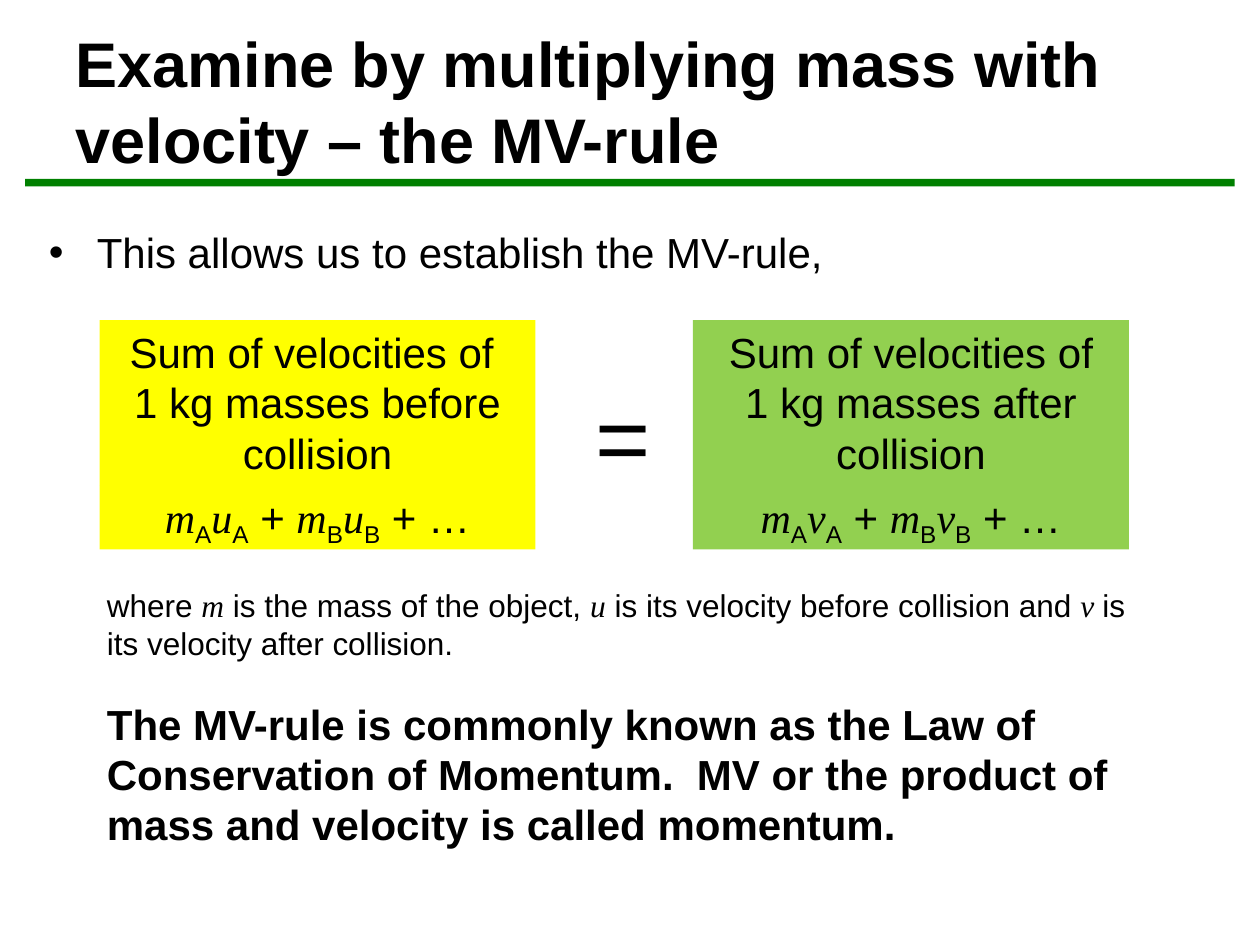
from typing import NamedTuple

from lxml import etree
from pptx import Presentation
from pptx.dml.color import RGBColor
from pptx.enum.shapes import MSO_SHAPE
from pptx.enum.text import MSO_ANCHOR, MSO_AUTO_SIZE, PP_ALIGN
from pptx.oxml.ns import qn
from pptx.util import Inches, Pt

RECT = MSO_SHAPE.RECTANGLE
LEFT, CENTER = PP_ALIGN.LEFT, PP_ALIGN.CENTER
TOP, MIDDLE = MSO_ANCHOR.TOP, MSO_ANCHOR.MIDDLE
NO_FIT = MSO_AUTO_SIZE.NONE

BLACK = RGBColor(0x00, 0x00, 0x00)
GREEN = RGBColor(0x00, 0x80, 0x00)
YELLOW = RGBColor(0xFF, 0xFF, 0x00)
LIME = RGBColor(0x92, 0xD0, 0x50)

SANS = "Arial"
SERIF = "Times New Roman"
PLAIN, MATH, SUB = "plain", "math", "sub"


class Term(NamedTuple):
    text: str
    style: str = PLAIN


class Para(NamedTuple):
    terms: list[Term]
    size: int = 24
    align: PP_ALIGN = LEFT
    bold: bool = False
    before: int = 0


class Box(NamedTuple):
    left: float
    top: float
    width: float
    height: float


class Side(NamedTuple):
    left: float
    fill: RGBColor
    lines: list[str]
    symbol: str


SIDES = [
    Side(0.79, YELLOW,
         ["Sum of velocities of ", "1 kg masses before collision"], "u"),
    Side(5.5, LIME,
         ["Sum of velocities of", "1 kg masses after collision"], "v"),
]


def write(frame, paras: list[Para], anchor: MSO_ANCHOR = TOP) -> None:
    frame.word_wrap = True
    frame.auto_size = NO_FIT
    frame.vertical_anchor = anchor
    for index, para in enumerate(paras):
        line = frame.add_paragraph() if index else frame.paragraphs[0]
        line.alignment = para.align
        if para.before:
            line.space_before = Pt(para.before)
        for term in para.terms:
            run = line.add_run()
            run.text = term.text
            font = run.font
            font.name = SERIF if term.style == MATH else SANS
            font.size = Pt(para.size)
            font.bold = para.bold
            font.italic = term.style == MATH
            font.color.rgb = BLACK
            if term.style == SUB:
                run._r.get_or_add_rPr().set("baseline", "-25000")


def place(shape, box: Box) -> None:
    shape.left, shape.top, shape.width, shape.height = map(Inches, box)


def add_text(slide, box: Box, paras: list[Para]):
    frame = slide.shapes.add_textbox(*map(Inches, box)).text_frame
    write(frame, paras)
    return frame


def add_rect(slide, box: Box, fill: RGBColor):
    shape = slide.shapes.add_shape(RECT, *map(Inches, box))
    shape.shadow.inherit = False
    shape.fill.solid()
    shape.fill.fore_color.rgb = fill
    shape.line.fill.background()
    return shape


def add_bullet(line) -> None:
    props = line._p.get_or_add_pPr()
    props.set("marL", str(Inches(0.38)))
    props.set("indent", str(Inches(-0.38)))
    etree.SubElement(props, qn("a:buFont")).set("typeface", SANS)
    etree.SubElement(props, qn("a:buChar")).set("char", "•")


def momentum(symbol: str) -> list[Term]:
    terms = []
    for body, tail in (("A", " + "), ("B", " + …")):
        terms += [Term("m", MATH), Term(body, SUB),
                  Term(symbol, MATH), Term(body, SUB), Term(tail)]
    return terms


def add_side(slide, side: Side) -> None:
    words = [Para([Term(line)], align=CENTER) for line in side.lines]
    rule = [Para(momentum(side.symbol), align=CENTER)]
    for top, height, paras in ((2.54, 1.31, words), (3.85, 0.51, rule)):
        shape = add_rect(slide, Box(side.left, top, 3.46, height), side.fill)
        write(shape.text_frame, paras)


def main() -> None:
    deck = Presentation()
    deck.slide_width, deck.slide_height = Inches(10), Inches(7.5)
    slide = deck.slides.add_slide(deck.slide_layouts[5])

    add_rect(slide, Box(0.2, 1.42, 9.6, 0.06), GREEN)
    title = slide.shapes.title
    place(title, Box(0.5, 0.17, 9, 1.25))
    heading = "Examine by multiplying mass with velocity – the MV-rule"
    write(title.text_frame, [Para([Term(heading)], 36, bold=True)], MIDDLE)

    intro = add_text(slide, Box(0.29, 1.75, 9, 0.46),
                     [Para([Term("This allows us to establish the MV-rule,")])])
    add_bullet(intro.paragraphs[0])

    add_text(slide, Box(4.62, 2.95, 0.65, 1.01),
             [Para([Term("=")], 54, CENTER)])
    for side in SIDES:
        add_side(slide, side)

    where = [
        Term("where "), Term("m", MATH),
        Term(" is the mass of the object, "), Term("u", MATH),
        Term(" is its velocity before collision and "), Term("v ", MATH),
        Term("is its velocity after collision."),
    ]
    law = ("The MV-rule is commonly known as the Law of Conservation of "
           "Momentum.  MV or the product of mass and velocity is called "
           "momentum.")
    add_text(slide, Box(0.75, 4.6, 8.38, 2.22),
             [Para(where, 18), Para([Term(law)], bold=True, before=21)])
    deck.save("out.pptx")


if __name__ == "__main__":
    main()
